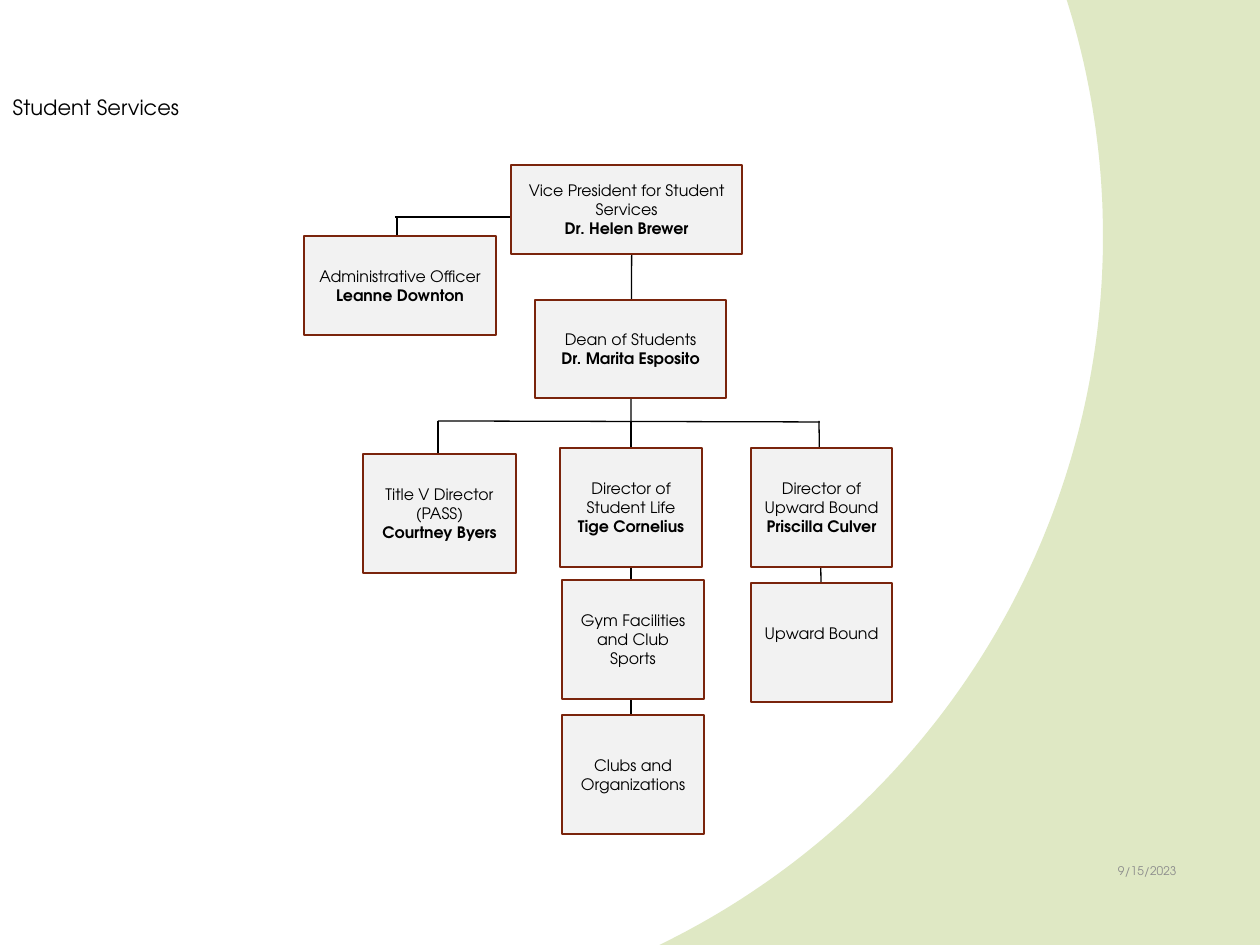
from math import asin, cos, sin

from lxml.etree import SubElement
from pptx import Presentation
from pptx.dml.color import RGBColor
from pptx.enum.shapes import MSO_CONNECTOR, MSO_SHAPE
from pptx.enum.text import MSO_ANCHOR, MSO_AUTO_SIZE, PP_ALIGN
from pptx.oxml.ns import qn
from pptx.util import Emu, Pt

SLIDE_W, SLIDE_H = 1260, 945
SCALE = 914400 / 126
FONT = "TeX Gyre Adventor"
COLORS = {"white": "FFFFFF", "green": "DFE8C4", "box": "F2F2F2",
          "border": "7A240C", "black": "000000", "date": "8C8C8C"}

TITLE = "Student Services"
DATE = "9/15/2023"

# (role lines, person, (left, top, width, height), bottom inset)
INSET, RAISED = 6, 25
POSITIONS = [
    (["Administrative Officer"], "Leanne Downton", (304, 236, 192, 99), INSET),
    (["Vice President for Student Services"], "Dr. Helen Brewer", (511, 165, 231, 89), INSET),
    (["Dean of Students"], "Dr. Marita Esposito", (535, 300, 191, 98), INSET),
    (["Title V Director", "(PASS)"], "Courtney Byers", (363, 454, 153, 119), INSET),
    (["Director of Student Life"], "Tige Cornelius", (560, 448, 142, 119), INSET),
    (["Director of Upward Bound"], "Priscilla Culver", (751, 448, 141, 119), INSET),
    (["Gym Facilities and Club Sports"], None, (562, 580, 142, 119), INSET),
    (["Clubs and Organizations"], None, (562, 715, 142, 119), INSET),
    (["Upward Bound"], None, (751, 583, 141, 119), RAISED),
]

# Trunk lines run behind the boxes they pass
BUS_Y, OFFICER_Y = 421, 217
LINKS = [
    ((819, BUS_Y), (822, 664)),            # Upward Bound branch
    ((631, BUS_Y), (631, 823)),            # Student Life branch
    ((632, 170), (631, BUS_Y)),            # vice president to dean
    ((395, OFFICER_Y), (692, OFFICER_Y)),  # vice president to officer
    ((397, 246), (397, OFFICER_Y)),
    ((438, BUS_Y), (438, 461)),            # Title V branch
    ((438, BUS_Y), (820, BUS_Y + 1)),      # bus under the dean
]


def px(length):
    return Emu(round(length * SCALE))


def color(name):
    return RGBColor.from_string(COLORS[name])


def style(paragraph, size, name="black", align=PP_ALIGN.LEFT, bold=False):
    paragraph.alignment = align
    for run in paragraph.runs:
        run.font.name = FONT
        run.font.size = Pt(size)
        run.font.bold = bold
        run.font.color.rgb = color(name)


def add_backdrop(slide):
    """Fill the area outside a large circle centred at a quarter of the slide."""
    center_x, center_y = SLIDE_W / 4, SLIDE_H / 4
    radius, steps = 788, 120
    start = asin(-center_y / radius)
    end = asin((SLIDE_H - center_y) / radius)
    angles = [start + (end - start) * i / steps for i in range(steps + 1)]
    outline = [(center_x + radius * cos(a), center_y + radius * sin(a)) for a in angles]
    outline += [(SLIDE_W, SLIDE_H), (SLIDE_W, 0)]
    corners = [(px(x), px(y)) for x, y in outline]
    builder = slide.shapes.build_freeform(*corners[0])
    builder.add_line_segments(corners[1:], close=True)
    backdrop = builder.convert_to_shape()
    backdrop.shadow.inherit = False
    backdrop.fill.solid()
    backdrop.fill.fore_color.rgb = color("green")
    backdrop.line.fill.background()


def add_position(slide, roles, person, area, bottom_inset):
    box = slide.shapes.add_shape(MSO_SHAPE.RECTANGLE, *map(px, area))
    box.shadow.inherit = False
    box.fill.solid()
    box.fill.fore_color.rgb = color("box")
    box.line.color.rgb = color("border")
    box.line.width = Pt(1.25)
    frame = box.text_frame
    frame.word_wrap = True
    frame.vertical_anchor = MSO_ANCHOR.MIDDLE
    frame.margin_bottom = px(bottom_inset)
    frame.text = "\n".join(roles + ([person] if person else []))
    for i, paragraph in enumerate(frame.paragraphs):
        style(paragraph, 9, align=PP_ALIGN.CENTER, bold=i >= len(roles))


def add_link(slide, begin, end):
    link = slide.shapes.add_connector(MSO_CONNECTOR.STRAIGHT, *map(px, begin + end))
    link.line.color.rgb = color("black")
    link.line.width = Pt(0.75)
    SubElement(link._element.spPr, qn("a:effectLst"))


def main():
    deck = Presentation()
    deck.slide_width, deck.slide_height = px(SLIDE_W), px(SLIDE_H)
    slide = deck.slides.add_slide(deck.slide_layouts[5])
    slide.background.fill.solid()
    slide.background.fill.fore_color.rgb = color("white")
    add_backdrop(slide)

    title = slide.shapes.title
    title.left, title.top, title.width, title.height = map(px, (0, 88, 193, 38))
    title.text_frame.text = TITLE
    title.text_frame.auto_size = MSO_AUTO_SIZE.NONE
    title.text_frame.word_wrap = False
    title.text_frame.vertical_anchor = MSO_ANCHOR.TOP
    style(title.text_frame.paragraphs[0], 12)

    for begin, end in LINKS:
        add_link(slide, begin, end)
    for position in POSITIONS:
        add_position(slide, *position)

    date = slide.shapes.add_textbox(*map(px, (1071, 845, 118, 52))).text_frame
    date.word_wrap = True
    date.vertical_anchor = MSO_ANCHOR.MIDDLE
    date.text = DATE
    style(date.paragraphs[0], 6.8, "date", PP_ALIGN.RIGHT)
    deck.save("out.pptx")


if __name__ == "__main__":
    main()
